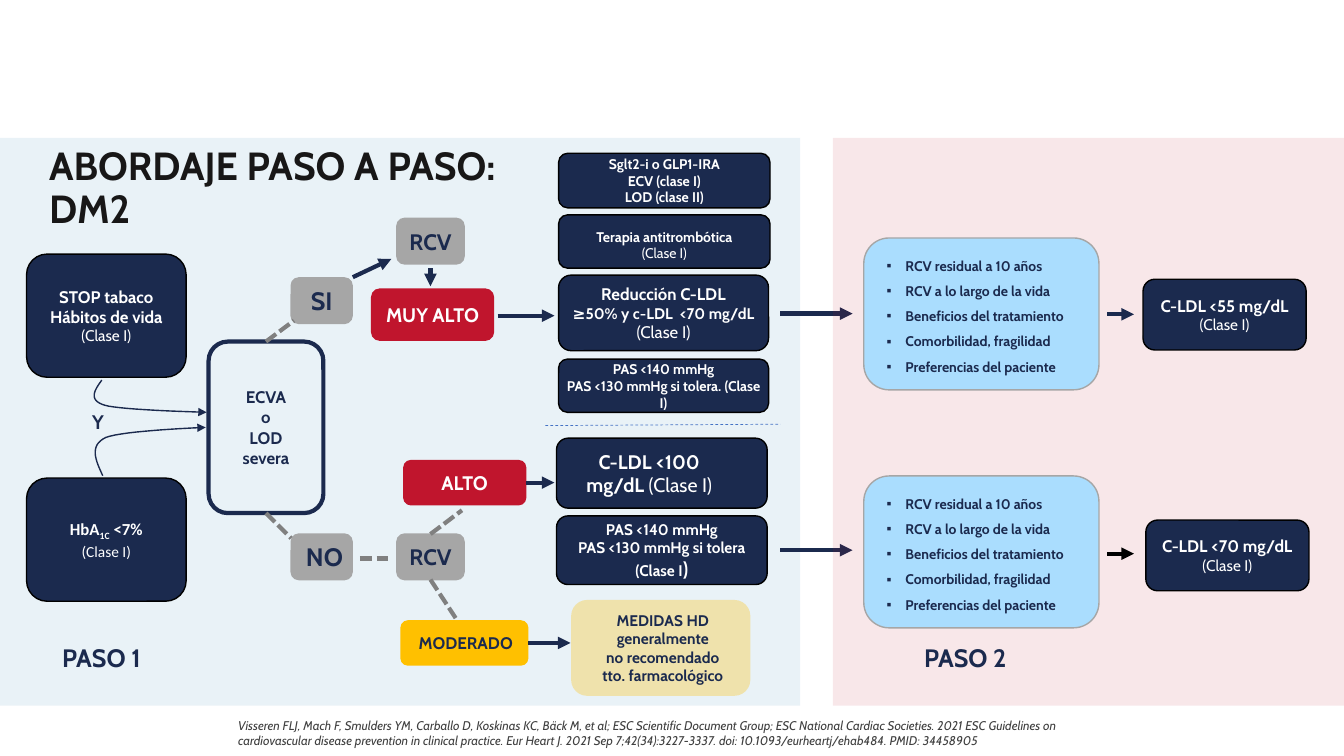
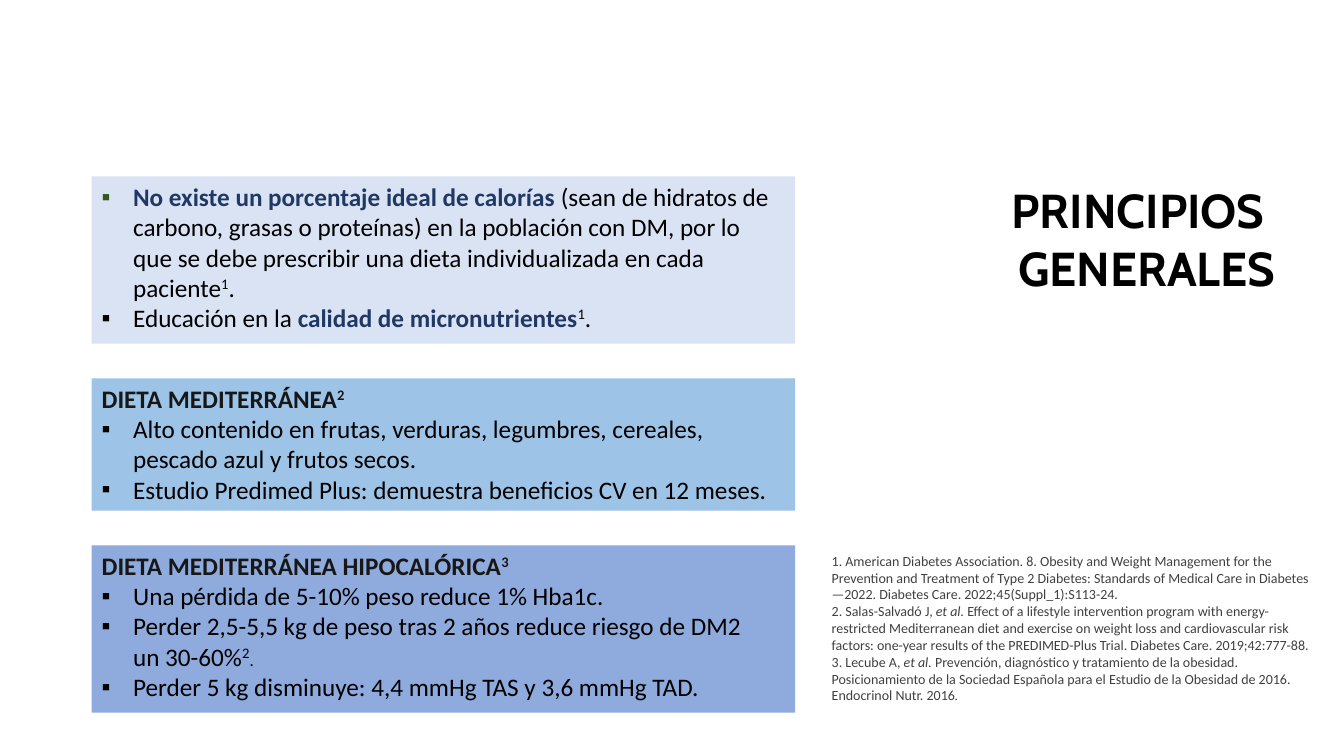
from dataclasses import dataclass

from lxml import etree
from pptx import Presentation
from pptx.dml.color import RGBColor
from pptx.enum.dml import MSO_LINE
from pptx.enum.shapes import MSO_CONNECTOR, MSO_SHAPE
from pptx.enum.text import MSO_ANCHOR, PP_ALIGN
from pptx.oxml.ns import qn
from pptx.util import Pt

LEFT, CENTER, RIGHT = PP_ALIGN.LEFT, PP_ALIGN.CENTER, PP_ALIGN.RIGHT
TOP, MIDDLE = MSO_ANCHOR.TOP, MSO_ANCHOR.MIDDLE
RECT, ROUND = MSO_SHAPE.RECTANGLE, MSO_SHAPE.ROUNDED_RECTANGLE
STRAIGHT = MSO_CONNECTOR.STRAIGHT
SHORT_DASH, DASH = MSO_LINE.SQUARE_DOT, MSO_LINE.DASH
SIDE_TOP, SIDE_BOTTOM, SIDE_RIGHT = 0, 2, 3

NAVY, RED, AMBER, GRAY, SKY = "1B2A4E", "C0152D", "FFC000", "A6A6A6", "AADDFE"
BLACK, WHITE, INK, DARK_GRAY, MID_GRAY = "000000", "FFFFFF", "181717", "404040", "808080"
DEEP_BLUE = "203864"
HEAD, BODY = "Cabin", "Calibri"
SMALL_INSET = (3.6, 3.6, 3.6, 3.6)
WIDE_INSET = (7.2, 3.6, 7.2, 3.6)


@dataclass
class Para:
    """Spans are plain strings or (text, style) pairs."""
    spans: list
    size: float = 12
    color: str = WHITE
    bold: bool = False
    italic: bool = False
    font: str = HEAD
    align: int = CENTER
    spacing: float = None
    bullet: str = None
    indent: float = 0


def rgb(code):
    return RGBColor.from_string(code)


# ---- Text ----
def add_bullet(para, color, indent):
    props = para._p.get_or_add_pPr()
    props.set("marL", str(Pt(indent)))
    props.set("indent", str(-Pt(indent)))
    tint = etree.SubElement(props, qn("a:buClr"))
    etree.SubElement(tint, qn("a:srgbClr")).set("val", color)
    etree.SubElement(props, qn("a:buFont")).set("typeface", "Arial")
    etree.SubElement(props, qn("a:buChar")).set("char", "▪")


def add_span(para, text, style):
    for number, piece in enumerate(text.split("\n")):
        if number:
            para.add_line_break()
        if not piece:
            continue
        span = para.add_run()
        span.text = piece
        for name in ("size", "bold", "italic"):
            if name in style:
                value = style[name]
                setattr(span.font, name, Pt(value) if name == "size" else value)
        if "color" in style:
            span.font.color.rgb = rgb(style["color"])
        if "base" in style:
            span._r.get_or_add_rPr().set("baseline", str(style["base"] * 1000))


def write(shape, paras, inset=SMALL_INSET, anchor=MIDDLE):
    frame = shape.text_frame
    frame.word_wrap = True
    frame.vertical_anchor = anchor
    (frame.margin_left, frame.margin_top,
     frame.margin_right, frame.margin_bottom) = [Pt(size) for size in inset]
    for number, item in enumerate(paras):
        para = frame.add_paragraph() if number else frame.paragraphs[0]
        para.alignment = item.align
        if item.spacing:
            para.line_spacing = item.spacing
        if item.bullet:
            add_bullet(para, item.bullet, item.indent)
        para.font.name, para.font.size = item.font, Pt(item.size)
        para.font.bold, para.font.italic = item.bold, item.italic
        para.font.color.rgb = rgb(item.color)
        for span in item.spans:
            add_span(para, *((span, {}) if isinstance(span, str) else span))


def add_text(page, left, top, width, height, paras, inset=SMALL_INSET):
    box = page.shapes.add_textbox(Pt(left), Pt(top), Pt(width), Pt(height))
    write(box, paras, inset, TOP)


def bold_lines(*lines, size=12, color=WHITE):
    return [Para([line], size, color, bold=True) for line in lines]


def class_one(size=11):
    return Para(["(Clase I)"], size)


# ---- Shapes and lines ----
def add_box(page, left, top, width, height, fill=None, line=None, weight=1,
            opacity=None, kind=ROUND):
    box = page.shapes.add_shape(kind, Pt(left), Pt(top), Pt(width), Pt(height))
    box.shadow.inherit = False
    if kind == ROUND:
        box.adjustments[0] = 0.167
    if fill:
        box.fill.solid()
        box.fill.fore_color.rgb = rgb(fill)
    else:
        box.fill.background()
    if opacity:
        tint = box._element.spPr.find(qn("a:solidFill")).find(qn("a:srgbClr"))
        etree.SubElement(tint, qn("a:alpha")).set("val", str(opacity * 1000))
    if line:
        box.line.color.rgb = rgb(line)
        box.line.width = Pt(weight)
    else:
        box.line.fill.background()
    return box


def add_arrowhead(shape):
    outline = shape._element.spPr.find(qn("a:ln"))
    etree.SubElement(outline, qn("a:tailEnd")).set("type", "triangle")


def add_line(page, start, end, color=NAVY, weight=3, dash=None, side=None):
    """Start is a point, or a box when a side is given; dashed lines have no head."""
    first = end if side is not None else start
    line = page.shapes.add_connector(STRAIGHT, *[Pt(value) for value in (*first, *end)])
    if side is not None:
        line.begin_connect(start, side)
    line.line.color.rgb = rgb(color)
    line.line.width = Pt(weight)
    etree.SubElement(line._element.spPr, qn("a:effectLst"))
    if dash:
        line.line.dash_style = dash
    else:
        add_arrowhead(line)


def bezier(points, steps=16):
    for step in range(1, steps + 1):
        t = step / steps
        weights = ((1 - t) ** 3, 3 * t * (1 - t) ** 2, 3 * t * t * (1 - t), t ** 3)
        yield tuple(Pt(sum(w * point[axis] for w, point in zip(weights, points)))
                    for axis in (0, 1))


def add_curve(page, points):
    builder = page.shapes.build_freeform(Pt(points[0][0]), Pt(points[0][1]))
    for first in range(0, len(points) - 1, 3):
        builder.add_line_segments(list(bezier(points[first:first + 4])), close=False)
    curve = builder.convert_to_shape()
    curve.shadow.inherit = False
    curve.fill.background()
    curve.line.color.rgb = rgb(NAVY)
    curve.line.width = Pt(1)
    add_arrowhead(curve)


# ---- Slide 1 regions ----
def step_one(page, left, top, width, height):
    def at(x, y):
        return left + x, top + y

    def block(x, y, w, h, paras, fill=NAVY, line=None, inset=SMALL_INSET, **look):
        box = add_box(page, *at(x, y), w, h, fill, line, **look)
        write(box, paras, inset)
        return box

    add_box(page, left, top, width, height, "95BFD8", opacity=20, kind=RECT)

    # Starting measures
    block(19, 83, 114, 88, bold_lines("STOP tabaco", "Hábitos de vida") + [class_one()],
          line=BLACK)
    hba = Para(["HbA", ("1C", {"base": -25}), " <7%"], bold=True, font=BODY)
    block(19, 243, 114, 88, [hba, Para(["(Clase I)"], 11, font=BODY)], line=BLACK)
    add_text(page, *at(55, 191), 30, 24, bold_lines("Y", size=14, color=NAVY))
    for points in (
            [(72.7, 173), (67.7, 180), (62.6, 187.3), (74.9, 191),
             (87, 194.5), (147.6, 196), (147.6, 196)],
            [(73.4, 241.3), (68.4, 230.5), (63.4, 219.7), (75.6, 214),
             (87.8, 209), (146.9, 206.8), (146.9, 206.8)]):
        add_curve(page, [at(*point) for point in points])

    # Decision and risk labels
    disease = block(149, 145.5, 82, 122.5,
                    bold_lines("ECVA", "o", "LOD severa", color=NAVY),
                    fill=None, line=NAVY, weight=3, inset=(9, 3.6, 9, 3.6))
    tags = [block(x, y, w, 32.5, bold_lines(label, size=size, color=NAVY), GRAY, GRAY,
                  inset=(shift, 0, 0, 0))
            for x, y, w, label, size, shift in (
                (208, 100, 43.5, "SI", 18, 0), (208, 283, 43.5, "NO", 18, 4),
                (283.5, 57.5, 48, "RCV", 16, 0), (283.5, 283, 48, "RCV", 16, 0))]
    low_risk = tags[-1]
    block(265, 107.5, 88, 37.5, bold_lines("MUY ALTO", size=14), RED, inset=(0, 0, 0, 0))
    high = block(288, 230, 88, 32.5, bold_lines("ALTO", size=14), RED)
    moderate = block(286, 344.5, 91.5, 32.5,
                     bold_lines("MODERADO", color=NAVY), AMBER, inset=(2, 0, 0, 0))

    # Treatment cards
    tight = (3, 0, 3, 0)
    reduction = Para(["Reducción C-LDL\n", ("≥50% y c-LDL  <70 mg/dL", {"size": 11})],
                     bold=True)
    ldl = Para(["C-LDL <100 mg/dL ", ("(Clase I)", {"bold": False})], 14, bold=True)
    pressure = Para(["PAS <130 mmHg si tolera (Clase I", (")", {"size": 14})],
                    11, bold=True)
    for x, y, w, h, paras, inset in (
            (399, 11, 151, 39, bold_lines("Sglt2-i o GLP1-IRA", "ECV (clase I)",
                                          "LOD (clase II)", size=10), tight),
            (399, 55, 151, 38, bold_lines("Terapia antitrombótica", size=10)
             + [class_one(10)], (3, 5, 3, 0)),
            (399, 98, 150, 54, [reduction, class_one(12)], (0, 0, 0, 0)),
            (399, 158, 150, 38, bold_lines(
                "PAS <140 mmHg", "PAS <130 mmHg si tolera. (Clase I)", size=10), tight),
            (397.5, 214.5, 150.5, 50, [ldl], (8, 0, 26, 0)),
            (397.5, 270, 150.5, 49, bold_lines("PAS <140 mmHg", size=11) + [pressure],
             tight)):
        block(x, y, w, h, paras, line=BLACK, inset=inset)
    block(408, 330, 128, 68.5, bold_lines(
        "MEDIDAS HD", "generalmente\nno recomendado\ntto. farmacológico",
        size=11, color=NAVY), AMBER, opacity=30, inset=(3, 0, 0, 0))

    # Dashed branches
    for start, side, end in ((disease, SIDE_TOP, (210, 130.5)),
                             (disease, SIDE_BOTTOM, (208, 286)),
                             (low_risk, SIDE_TOP, (330, 266)),
                             (low_risk, SIDE_BOTTOM, (325.5, 343))):
        add_line(page, start, at(*end), MID_GRAY, dash=SHORT_DASH, side=side)
    add_line(page, at(257, 300.5), at(277, 300.5), MID_GRAY, dash=SHORT_DASH)
    add_line(page, at(389.5, 205.5), at(557.5, 204.5), "4472C4", 0.5, DASH)

    # Arrows
    for start, end in (((252, 99.5), (279.5, 86.5)), ((307.5, 93), (307.5, 106)),
                       ((355.5, 127), (396, 127)), ((557.5, 125.5), (609, 125.5)),
                       ((557.5, 294.5), (609, 294.5))):
        add_line(page, at(*start), at(*end))
    add_line(page, high, at(396, 246.25), side=SIDE_RIGHT)
    add_line(page, moderate, at(407.5, 360.75), side=SIDE_RIGHT)

    # Headings
    add_text(page, *at(28, 3), 475, 104,
             [Para(["ABORDAJE PASO A PASO: \nDM2"], 28, INK, True, align=LEFT,
                   spacing=0.9)], WIDE_INSET)
    add_text(page, *at(0, 356.5), 145, 29, bold_lines("PASO 1", size=18, color=NAVY))


def step_two(page, left, top, width, height):
    add_box(page, left, top, width, height, RED, opacity=10, kind=RECT)
    factors = [Para([text], 10, NAVY, True, align=LEFT, spacing=1.5, bullet=NAVY,
                    indent=13.5)
               for text in ("RCV residual a 10 años", "RCV a lo largo de la vida",
                            "Beneficios del tratamiento", "Comorbilidad, fragilidad",
                            "Preferencias del paciente")]
    for card_y, arrow_y, goal_x, goal_y, target, color in (
            (71.5, 126, 221.5, 101, "C-LDL <55 mg/dL", NAVY),
            (241.5, 297, 223.5, 273, "C-LDL <70 mg/dL", BLACK)):
        card = add_box(page, left + 22, top + card_y, 168, 108.5, SKY, GRAY)
        write(card, factors, (11, 0, 0, 3))
        add_line(page, (left + 196, top + arrow_y), (left + 215, top + arrow_y), color)
        goal = add_box(page, left + goal_x, top + goal_y, 116.5, 50.5, NAVY, BLACK)
        write(goal, bold_lines(target) + [class_one()], (0, 0, 0, 0))
    add_text(page, left + 22, top + 356.5, 145, 29,
             bold_lines("PASO 2", size=18, color=NAVY))


def approach_slide(page):
    step_one(page, 0, 98.5, 571.5, 405.5)
    step_two(page, 595, 98.5, 365, 405.5)
    add_text(page, 166.5, 509, 628, 29, [Para([
        "Visseren FLJ, Mach F, Smulders YM, Carballo D, Koskinas KC, Bäck M, et al; "
        "ESC Scientific Document Group; ESC National Cardiac Societies. 2021 ESC "
        "Guidelines on cardiovascular disease prevention in clinical practice. Eur Heart "
        "J. 2021 Sep 7;42(34):3227-3337. doi: 10.1093/eurheartj/ehab484. PMID: 34458905"],
        9, DARK_GRAY, italic=True, align=LEFT)])


# ---- Slide 2 regions ----
def diet_panels(page, left, top, width, gap):
    def point(*spans, mark=BLACK):
        return Para(list(spans), 18, BLACK, font=BODY, align=LEFT, bullet=mark,
                    indent=22.5)

    def heading(text, note):
        return Para([text, (note, {"base": 30})], 18, INK, True, font=BODY, align=LEFT)

    strong = {"bold": True, "color": DEEP_BLUE}
    raised = {"base": 30}
    panels = (
        (119.5, "DAE3F3", [
            point(("No existe un porcentaje ideal de calorías ", strong),
                  "(sean de hidratos de carbono, grasas o proteínas) en la población con "
                  "DM, por lo que se debe prescribir una dieta individualizada en cada "
                  "paciente", ("1", raised), ".", mark="385623"),
            point("Educación en la ", ("calidad de micronutrientes", strong),
                  ("1", raised), ".")]),
        (94.5, "9DC3E6", [
            heading("DIETA MEDITERRÁNEA", "2"),
            point("Alto contenido en frutas, verduras, legumbres, cereales, pescado azul "
                  "y frutos secos."),
            point("Estudio Predimed Plus: demuestra beneficios CV en 12 meses.")]),
        (119.5, "8FAADC", [
            heading("DIETA MEDITERRÁNEA HIPOCALÓRICA", "3"),
            point("Una pérdida de 5-10% peso reduce 1% Hba1c."),
            point("Perder 2,5-5,5 kg de peso tras 2 años reduce riesgo de DM2\nun 30-60%",
                  ("2", raised), (".", {"size": 12})),
            point("Perder 5 kg disminuye: 4,4 mmHg TAS y 3,6 mmHg TAD.")]))
    for height, fill, paras in panels:
        write(add_box(page, left, top, width, height, fill, kind=RECT), paras,
              WIDE_INSET, TOP)
        top += height + gap


def references(page, left, top, width, height):
    et_al = ("et al. ", {"italic": True})
    entries = (
        ["1. American Diabetes Association. 8. Obesity and Weight Management for the "
         "Prevention and Treatment of Type 2 Diabetes: Standards of Medical Care in "
         "Diabetes—2022. Diabetes Care. 2022;45(Suppl_1):S113-24."],
        ["2. Salas-Salvadó J, ", et_al,
         "Effect of a lifestyle intervention program with energy-restricted Mediterranean "
         "diet and exercise on weight loss and cardiovascular risk factors: one-year "
         "results of the PREDIMED-Plus Trial. Diabetes Care. 2019;42:777-88."],
        ["3. Lecube A, ", et_al,
         "Prevención, diagnóstico y tratamiento de la obesidad. Posicionamiento de la "
         "Sociedad Española para el Estudio de la Obesidad de 2016. Endocrinol Nutr. 2016",
         (".", {"size": 8, "color": BLACK})])
    add_text(page, left, top, width, height,
             [Para(spans, 10, DARK_GRAY, font=BODY, align=LEFT) for spans in entries],
             WIDE_INSET)


def principles_slide(page):
    add_text(page, 671, 126, 247, 90,
             [Para(["PRINCIPIOS \nGENERALES"], 34, BLACK, True, align=RIGHT)], WIDE_INSET)
    diet_panels(page, 65.5, 126, 502.5, 24.75)
    references(page, 587, 391, 358.5, 124)


def main():
    deck = Presentation()
    deck.slide_width, deck.slide_height = Pt(960), Pt(540)
    for build in (approach_slide, principles_slide):
        build(deck.slides.add_slide(deck.slide_layouts[6]))
    deck.save("out.pptx")


if __name__ == "__main__":
    main()
